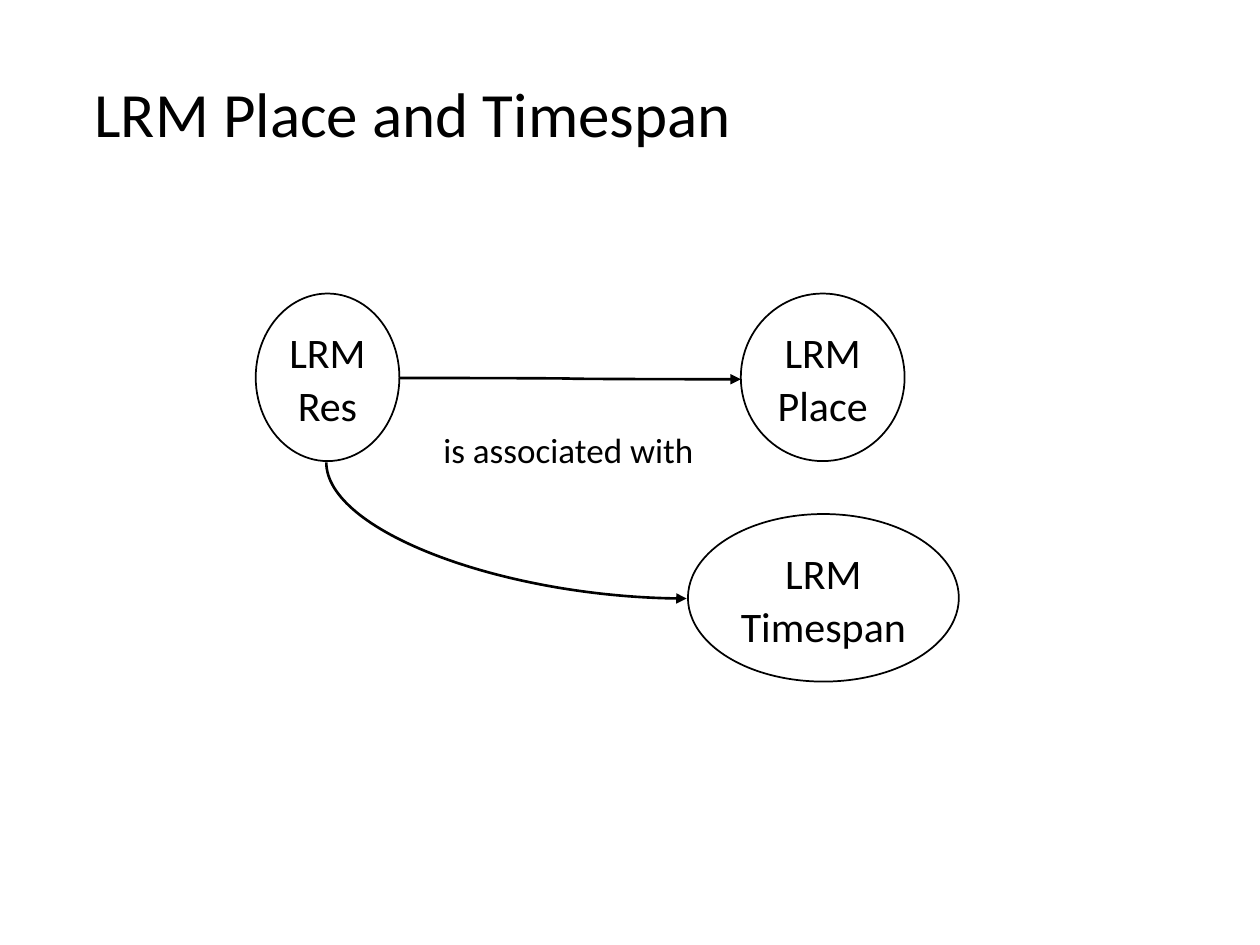
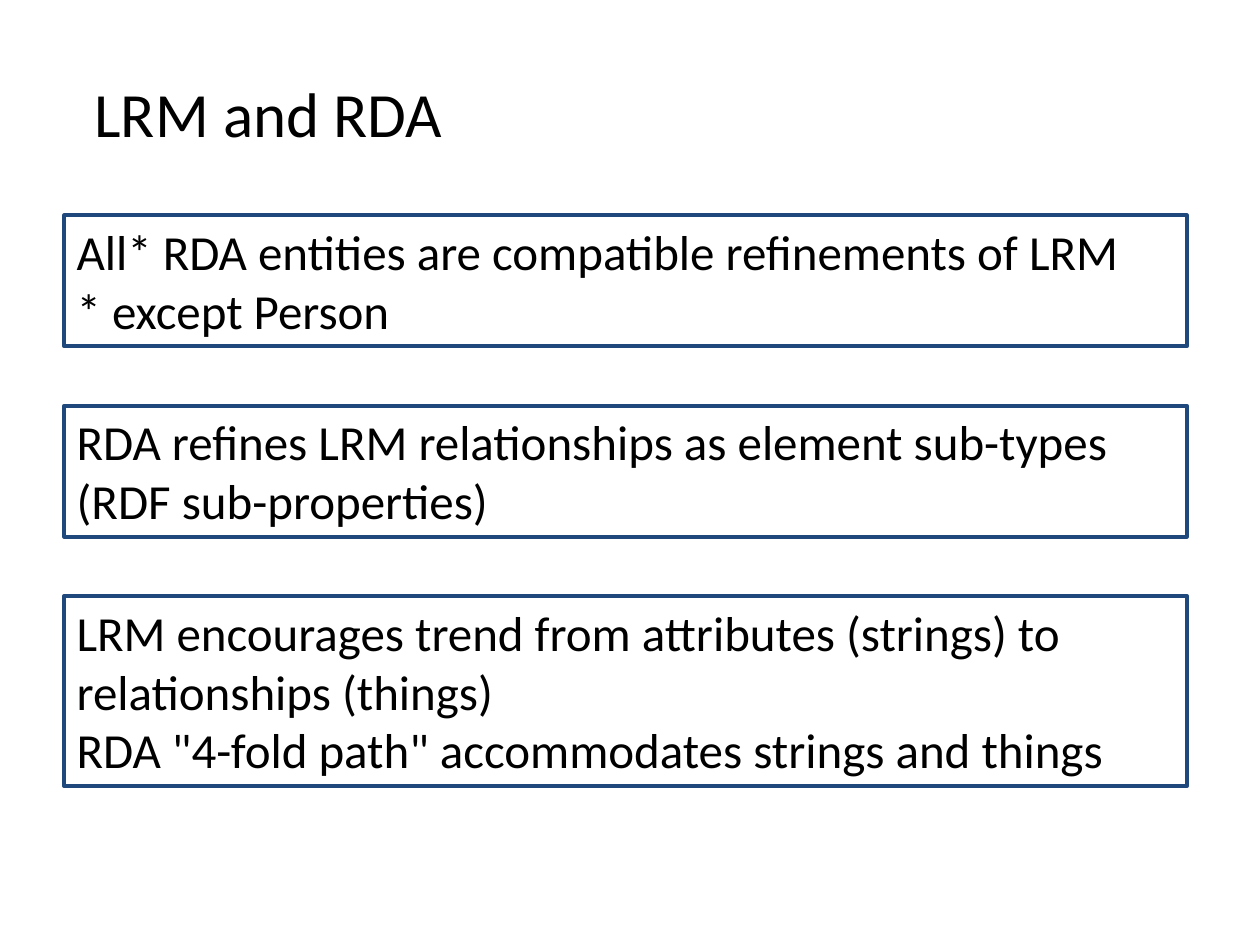
"""Build two slides on LRM entities and their relation to RDA."""
from lxml import etree
from pptx import Presentation
from pptx import util as u
from pptx.dml.color import RGBColor
from pptx.enum import shapes, text
from pptx.oxml.ns import qn

BLACK, WHITE, NAVY = "000000", "FFFFFF", "1F497D"


def rgb(value):
    return RGBColor.from_string(value)


def write(sp, content, size, wrap=False, align=text.PP_ALIGN.LEFT, spacing=1.0,
          anchor=text.MSO_ANCHOR.TOP):
    tf = sp.text_frame
    tf.text = content
    tf.word_wrap = wrap
    tf.auto_size = text.MSO_AUTO_SIZE.NONE
    tf.vertical_anchor = anchor
    for p in tf.paragraphs:
        p.alignment = align
        p.line_spacing = spacing
        for r in p.runs:
            r.font.name = "Calibri"
            r.font.size = u.Pt(size)
            r.font.color.rgb = rgb(BLACK)


prs = Presentation()
prs.slide_width, prs.slide_height = u.Inches(10), u.Inches(7.5)

slides = []
for title, width in [("LRM Place and Timespan", 5.45), ("LRM and RDA", 2.99)]:
    s = prs.slides.add_slide(prs.slide_layouts[5])
    sp = s.shapes.title
    sp.left, sp.top = u.Inches(0.65), u.Inches(0.54)
    sp.width, sp.height = u.Inches(width), u.Inches(0.71)
    write(sp, title, 36)
    slides.append(s)
diagram, summary = slides

entities = [("LRM\nRes", 2.03, 2.33, 1.14),
            ("LRM\nPlace", 5.88, 2.33, 1.3),
            ("LRM\nTimespan", 5.46, 4.08, 2.15)]
for name, left, top, width in entities:
    sp = diagram.shapes.add_shape(shapes.MSO_SHAPE.OVAL, u.Inches(left), u.Inches(top),
                                  u.Inches(width), u.Inches(1.33))
    sp.shadow.inherit = False
    sp.fill.solid()
    sp.fill.fore_color.rgb = rgb(WHITE)
    sp.line.color.rgb = rgb(BLACK)
    sp.line.width = u.Pt(1)
    write(sp, name, 24, align=text.PP_ALIGN.CENTER, spacing=1.05,
          anchor=text.MSO_ANCHOR.MIDDLE)

arrows = []
for x1, y1, x2, y2 in [(3.17, 3, 5.88, 3.01), (3.48, 2.78, 4.56, 5.64)]:
    cxn = diagram.shapes.add_connector(shapes.MSO_CONNECTOR.CURVE, u.Inches(x1), u.Inches(y1),
                                       u.Inches(x2), u.Inches(y2))
    cxn.line.color.rgb = rgb(BLACK)
    cxn.line.width = u.Pt(1.5)
    etree.SubElement(cxn.line._get_or_add_ln(), qn("a:tailEnd"), type="triangle")
    etree.SubElement(cxn._element.spPr, qn("a:effectLst"))
    arrows.append(cxn)
to_timespan = arrows[1]._element.spPr
to_timespan.find(qn("a:prstGeom")).set("prst", "curvedConnector2")
to_timespan.find(qn("a:xfrm")).set("rot", str(270 * 60000))
to_timespan.find(qn("a:xfrm")).set("flipH", "1")

label = diagram.shapes.add_textbox(u.Inches(3.42), u.Inches(3.33), u.Inches(2.21), u.Inches(0.46))
write(label, "is associated with", 20, spacing=1.07)

statements = [
    ("All* RDA entities are compatible refinements of LRM\n* except Person", 1.04),
    ("RDA refines LRM relationships as element sub-types (RDF sub-properties)", 1.04),
    ("LRM encourages trend from attributes (strings) to relationships (things)\n"
     'RDA "4-fold path" accommodates strings and things', 1.51),
]
for i, (statement, height) in enumerate(statements):
    sp = summary.shapes.add_shape(shapes.MSO_SHAPE.RECTANGLE, u.Inches(0.51),
                                  u.Inches(1.71 + 1.51 * i), u.Inches(8.91), u.Inches(height))
    sp.shadow.inherit = False
    sp.fill.background()
    sp.line.color.rgb = rgb(NAVY)
    sp.line.width = u.Pt(2.25)
    write(sp, statement, 28, wrap=True)

prs.save("out.pptx")
